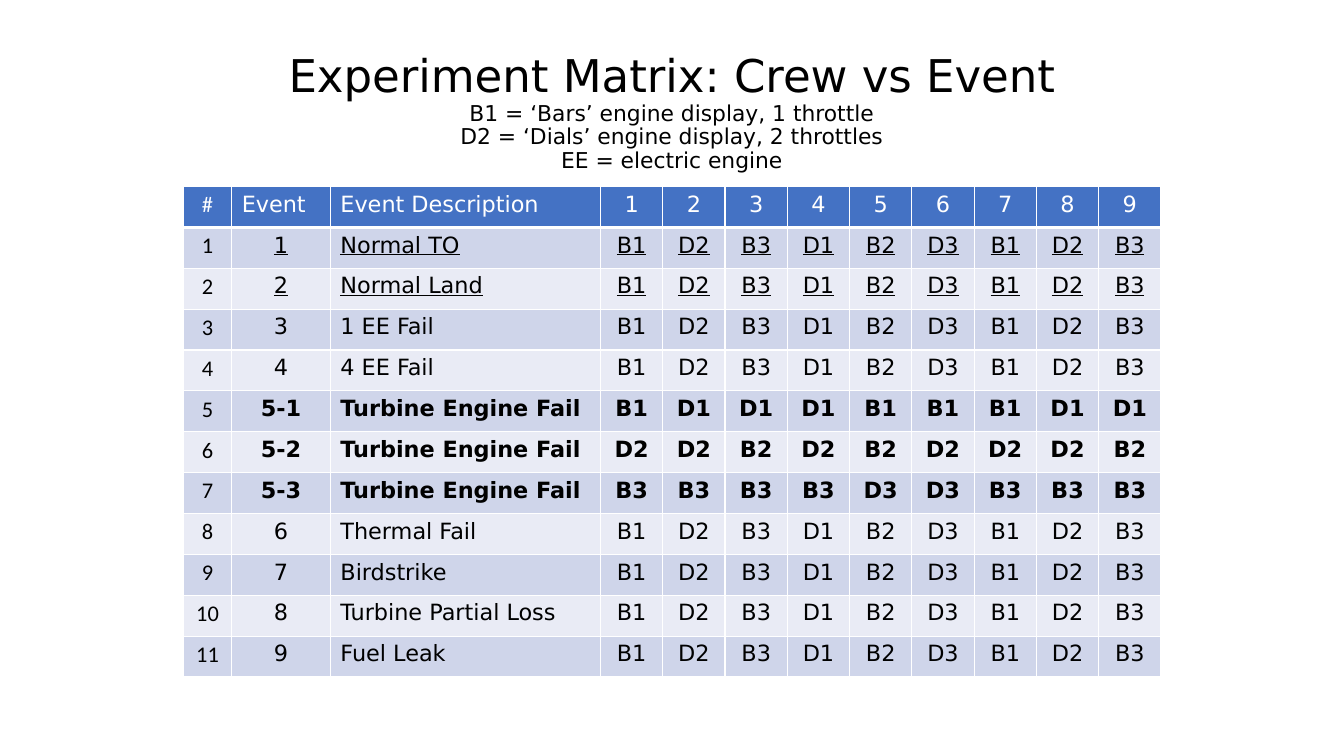
from dataclasses import dataclass

from lxml import etree
from pptx import Presentation
from pptx import util as u
from pptx.dml import color
from pptx.enum import text
from pptx.oxml import ns


@dataclass(frozen=True)
class Theme:
    ink: str = "000000"
    white: str = "FFFFFF"
    header: str = "4472C4"
    bands: tuple = ("CFD5EA", "E9EBF5")
    font: str = "DejaVu Sans"
    number_font: str = "Calibri"
    title_size: float = 32.2
    legend_size: float = 15.6
    cell_size: float = 16
    border: float = 1
    header_border: float = 3


class SlideBuilder:
    def __init__(self, slide, theme):
        self.slide = slide
        self.theme = theme

    def format_run(self, run, size, ink, font=None, bold=False, underline=False):
        run.font.name = font or self.theme.font
        run.font.size = u.Pt(size)
        run.font.color.rgb = color.RGBColor.from_string(ink)
        run.font.bold = bold
        run.font.underline = underline

    def title(self, heading, legend, left, top, width, height):
        shape = self.slide.shapes.add_textbox(*map(u.Pt, (left, top, width, height)))
        shape.text_frame.word_wrap = True
        shape.text_frame.vertical_anchor = text.MSO_ANCHOR.MIDDLE
        paragraph = shape.text_frame.paragraphs[0]
        paragraph.text = "\v".join([heading, *legend])
        paragraph.alignment = text.PP_ALIGN.CENTER
        paragraph.line_spacing = 0.9
        sizes = [self.theme.title_size] + [self.theme.legend_size] * len(legend)
        for run, size in zip(paragraph.runs, sizes):
            self.format_run(run, size, self.theme.ink)
        for line_break in paragraph._p.findall(ns.qn("a:br")):
            size = str(u.Pt(self.theme.legend_size).centipoints)
            etree.SubElement(line_break, ns.qn("a:rPr"), sz=size)

    def cell_borders(self, cell, bottom):
        properties = cell._tc.get_or_add_tcPr()
        for side in "LRTB":
            width = bottom if side == "B" else self.theme.border
            line = etree.SubElement(properties, ns.qn(f"a:ln{side}"), w=str(u.Pt(width)))
            fill = etree.SubElement(line, ns.qn("a:solidFill"))
            etree.SubElement(fill, ns.qn("a:srgbClr"), val=self.theme.white)

    def cell(self, cell, value, fill, ink, bottom, centered, **style):
        self.cell_borders(cell, bottom)
        cell.fill.solid()
        cell.fill.fore_color.rgb = color.RGBColor.from_string(fill)
        paragraph = cell.text_frame.paragraphs[0]
        paragraph.text = value
        paragraph.alignment = text.PP_ALIGN.CENTER if centered else text.PP_ALIGN.LEFT
        self.format_run(paragraph.runs[0], self.theme.cell_size, ink, **style)

    def matrix(self, header, events, left, top, widths, row_height):
        theme = self.theme
        rows = [header] + [[str(n), *event] for n, event in enumerate(events, 1)]
        frame = self.slide.shapes.add_table(
            len(rows), len(widths), u.Pt(left), u.Pt(top),
            u.Pt(sum(widths)), u.Pt(row_height * len(rows)))
        table = frame.table
        table.first_row = table.horz_banding = False
        for column, width in zip(table.columns, widths):
            column.width = u.Pt(width)
        for r, values in enumerate(rows):
            table.rows[r].height = u.Pt(row_height)
            is_header = r == 0
            fill = theme.bands[(r - 1) % 2] if r else theme.header
            for c, value in enumerate(values):
                is_number = c == 0
                self.cell(
                    table.cell(r, c), value, fill,
                    ink=theme.white if is_header else theme.ink,
                    bottom=theme.header_border if is_header else theme.border,
                    centered=c != 2 and not (is_header and c == 1),
                    font=theme.number_font if is_number else theme.font,
                    bold=not is_number and values[1].startswith("5-"),
                    underline=not is_number and values[2].startswith("Normal"))


STANDARD = ["B1", "D2", "B3", "D1", "B2", "D3", "B1", "D2", "B3"]
HEADER = ["#", "Event", "Event Description", *map(str, range(1, 10))]
EVENTS = [
    ["1", "Normal TO", *STANDARD],
    ["2", "Normal Land", *STANDARD],
    ["3", "1 EE Fail", *STANDARD],
    ["4", "4 EE Fail", *STANDARD],
    ["5-1", "Turbine Engine Fail", *"B1 D1 D1 D1 B1 B1 B1 D1 D1".split()],
    ["5-2", "Turbine Engine Fail", *"D2 D2 B2 D2 B2 D2 D2 D2 B2".split()],
    ["5-3", "Turbine Engine Fail", *"B3 B3 B3 B3 D3 D3 B3 B3 B3".split()],
    ["6", "Thermal Fail", *STANDARD],
    ["7", "Birdstrike", *STANDARD],
    ["8", "Turbine Partial Loss", *STANDARD],
    ["9", "Fuel Leak", *STANDARD],
]
LEGEND = [
    "B1 = ‘Bars’ engine display, 1 throttle",
    "D2 = ‘Dials’ engine display, 2 throttles",
    "EE = electric engine",
]


def main():
    presentation = Presentation()
    presentation.slide_width = u.Pt(960)
    presentation.slide_height = u.Pt(540)
    slide = presentation.slides.add_slide(presentation.slide_layouts[6])
    builder = SlideBuilder(slide, Theme())
    builder.title("Experiment Matrix: Crew vs Event", LEGEND, 66, 28.8, 828, 104.4)
    builder.matrix(HEADER, EVENTS, left=131, top=133.2,
                   widths=[34.5, 70.5, 193] + [44.5] * 9, row_height=29.2)
    presentation.save("out.pptx")


if __name__ == "__main__":
    main()
